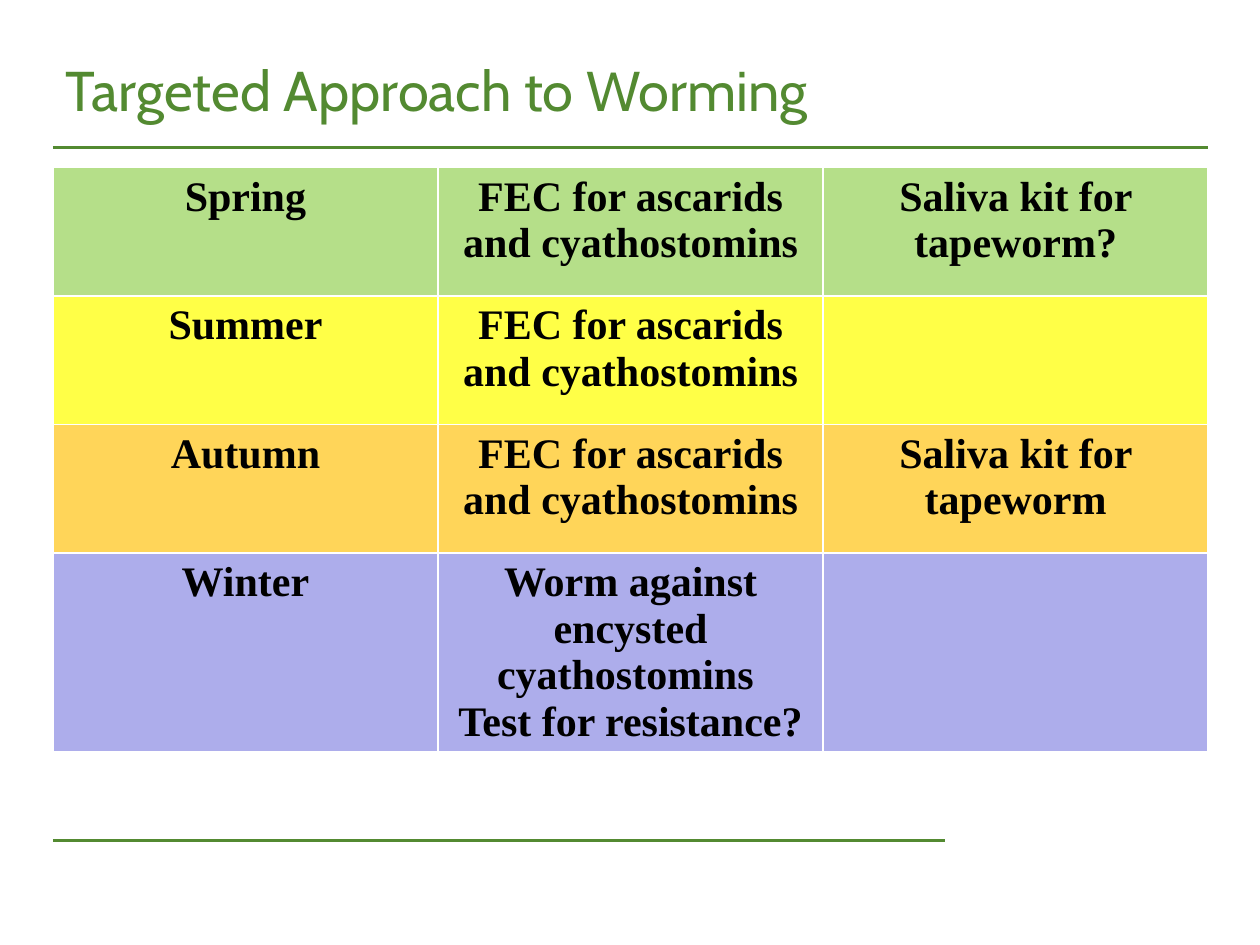
from dataclasses import dataclass

from lxml.etree import SubElement
from pptx import Presentation
from pptx.dml.color import RGBColor
from pptx.enum.shapes import MSO_CONNECTOR
from pptx.enum.text import MSO_ANCHOR, PP_ALIGN
from pptx.oxml.ns import qn
from pptx.util import Inches, Pt


@dataclass(frozen=True)
class Theme:
    green: RGBColor = RGBColor(0x53, 0x8A, 0x31)
    black: RGBColor = RGBColor(0, 0, 0)
    border: str = "FFFFFF"
    title_font: str = "Cabin"
    title_size: Pt = Pt(32)
    table_font: str = "Times New Roman"
    table_size: Pt = Pt(24)
    rule_width: Pt = Pt(1.5)
    border_width: Pt = Pt(1)


THEME = Theme()
LEFT, WIDTH = 0.42, 9.17

# Fill colour, opacity in percent, row height, cell texts
SEASONS = [
    ("92D050", 67, 1.02,
     ["Spring", "FEC for ascarids and cyathostomins", "Saliva kit for tapeworm?"]),
    ("FFFF00", 72, 1.02,
     ["Summer", "FEC for ascarids and cyathostomins", ""]),
    ("FFC000", 65, 1.02,
     ["Autumn", "FEC for ascarids and cyathostomins", "Saliva kit for tapeworm"]),
    ("ADADEB", 100, 1.45,
     ["Winter", "Worm against encysted cyathostomins \nTest for resistance?", ""]),
]


def set_font(font, **values):
    color = values.pop("color")
    for name, value in values.items():
        setattr(font, name, value)
    font.color.rgb = color


def add_rule(s, left, top, width):
    y = Inches(top)
    line = s.shapes.add_connector(
        MSO_CONNECTOR.STRAIGHT, Inches(left), y, Inches(left + width), y)
    line.line.color.rgb = THEME.green
    line.line.width = THEME.rule_width
    SubElement(line._element.spPr, qn("a:effectLst"))


def add_title(s, left, top, width, height, text):
    box = s.shapes.add_textbox(*map(Inches, (left, top, width, height)))
    tf = box.text_frame
    tf.word_wrap = True
    tf.vertical_anchor = MSO_ANCHOR.MIDDLE
    r = tf.paragraphs[0].add_run()
    r.text = text
    set_font(r.font, name=THEME.title_font, size=THEME.title_size, color=THEME.green)


def style_cell(cell, color, opacity):
    """Draw the borders, which must precede the fill in the XML, then the fill."""
    tc_pr = cell._tc.get_or_add_tcPr()
    for side in ("lnL", "lnR", "lnT", "lnB"):
        ln = SubElement(tc_pr, qn(f"a:{side}"), w=str(THEME.border_width))
        fill = SubElement(ln, qn("a:solidFill"))
        SubElement(fill, qn("a:srgbClr"), val=THEME.border)
    cell.fill.solid()
    cell.fill.fore_color.rgb = RGBColor.from_string(color)
    if opacity < 100:
        clr = tc_pr.find(qn("a:solidFill")).find(qn("a:srgbClr"))
        SubElement(clr, qn("a:alpha"), val=str(opacity * 1000))


def add_season_table(s, left, top, width, seasons):
    columns = len(seasons[0][3])
    height = sum(season[2] for season in seasons)
    frame = s.shapes.add_table(
        len(seasons), columns, *map(Inches, (left, top, width, height)))
    table = frame.table
    for column in table.columns:
        column.width = Inches(width / columns)
    for row, (color, opacity, row_height, texts) in zip(table.rows, seasons):
        row.height = Inches(row_height)
        for cell, text in zip(row.cells, texts):
            style_cell(cell, color, opacity)
            cell.text = text
            for p in cell.text_frame.paragraphs:
                p.alignment = PP_ALIGN.CENTER
                for r in p.runs:
                    set_font(r.font, name=THEME.table_font, size=THEME.table_size,
                             bold=True, color=THEME.black)


def main():
    prs = Presentation()
    prs.slide_width, prs.slide_height = Inches(10), Inches(7.5)
    s = prs.slides.add_slide(prs.slide_layouts[6])
    add_rule(s, LEFT, 1.17, WIDTH)
    add_rule(s, LEFT, 6.67, 7.08)
    add_season_table(s, LEFT, 1.33, WIDTH, SEASONS)
    add_title(s, LEFT, 0.33, WIDTH, 0.75, "Targeted Approach to Worming")
    prs.save("out.pptx")


if __name__ == "__main__":
    main()
